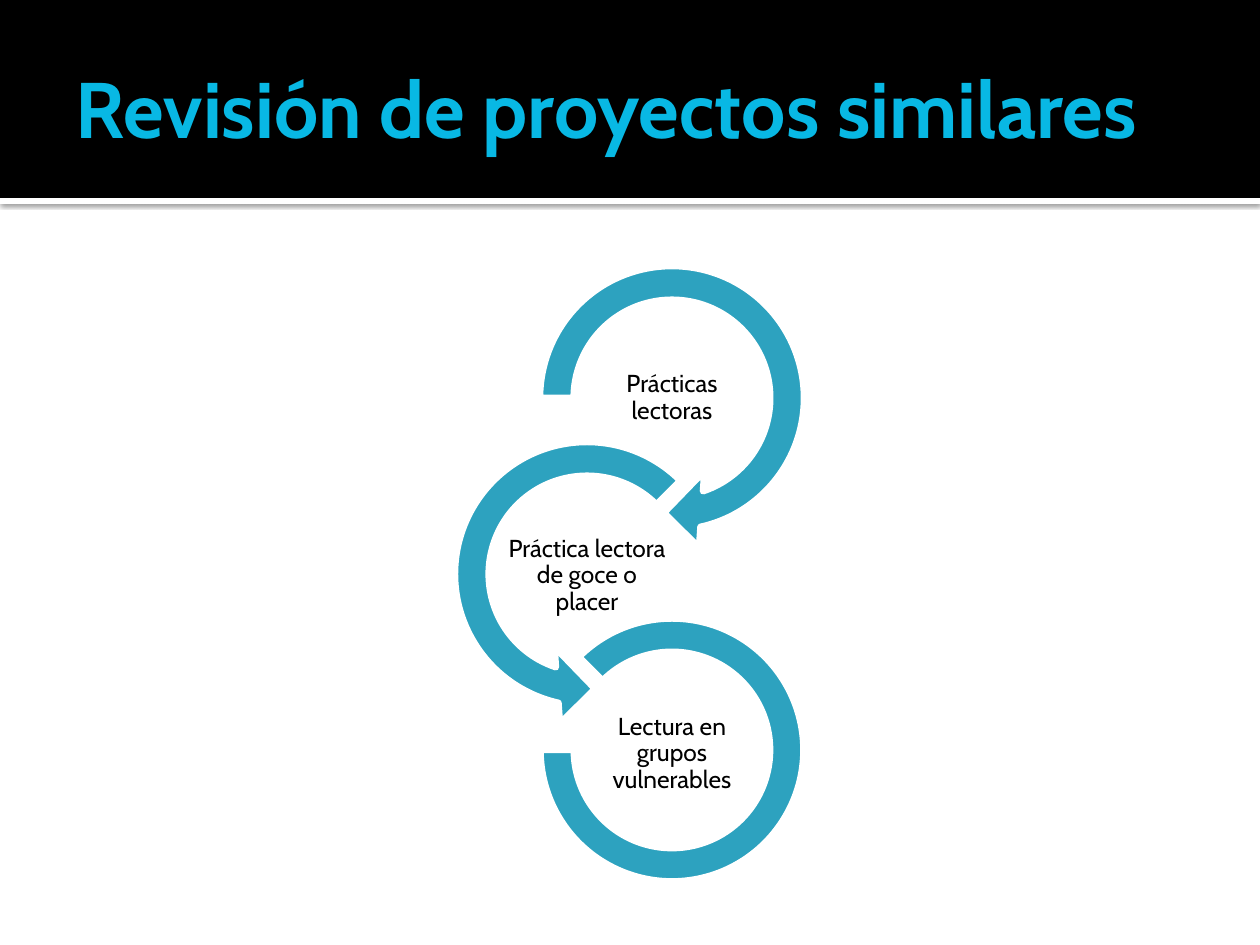
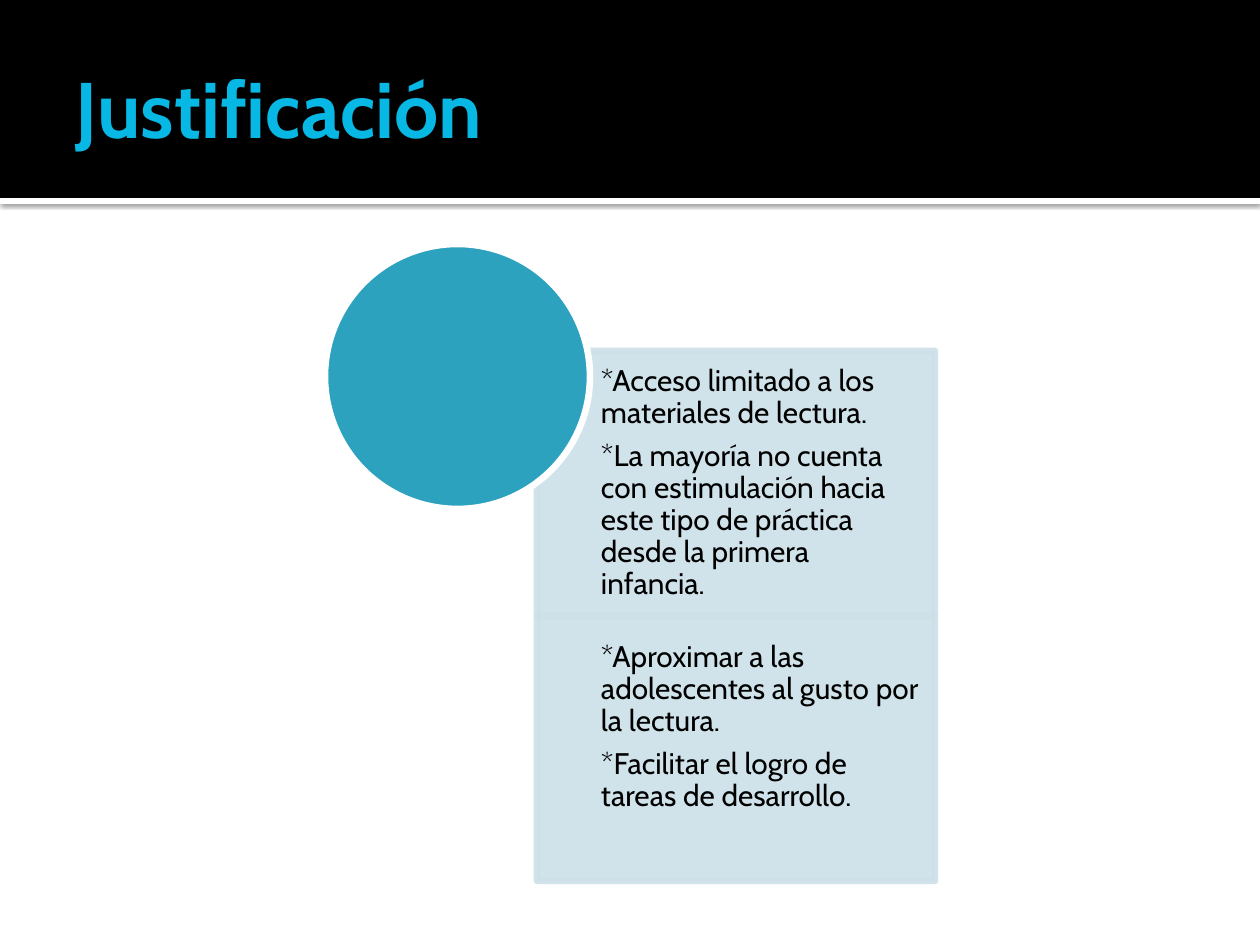
from lxml.etree import SubElement
from pptx import Presentation
from pptx.dml.color import RGBColor
from pptx.enum.shapes import MSO_SHAPE
from pptx.enum.text import MSO_ANCHOR, PP_ALIGN
from pptx.oxml.ns import qn
from pptx.util import Emu, Pt

FONT = "Cabin"
BLACK, WHITE, TITLE_BLUE = "000000", "FFFFFF", "08B8E4"
TEAL, PALE_BLUE = "2DA2BF", "CDE0E8"
OUTLINE = 3.78
SLIDE_WIDTH, SLIDE_HEIGHT = 1260, 945
BAND_HEIGHT, STRIP_HEIGHT = 198, 6

REVIEW_TITLE = "Revisión de proyectos similares"
RINGS = [
    ("Prácticas lectoras", MSO_SHAPE.CIRCULAR_ARROW, 672, 307,
     (0.11, 11.42, 45, 108, 0.125)),
    ("Práctica lectora de goce o placer", MSO_SHAPE.LEFT_CIRCULAR_ARROW, 587, 307,
     (0.11, 11.42, 63, 189, 0.125)),
    ("Lectura en grupos vulnerables", MSO_SHAPE.BLOCK_ARC, 672, 263,
     (135, 108, 0.127)),
]
FIRST_CENTER, RING_STEP, LABEL_STEP = 398, 176, 178
LABEL_WIDTH, LABEL_HEIGHT = 170, 86

REASONS_TITLE = "Justificación"
REASONS = [
    (["*Acceso limitado a los materiales de lectura.",
      "*La mayoría no cuenta con estimulación hacia este tipo de práctica "
      "desde la primera infancia."], 16),
    (["*Aproximar a las adolescentes al gusto por la lectura.",
      "*Facilitar el logro de tareas de desarrollo."], 59),
]
CARD_LEFT, CARD_TOP, CARD_WIDTH, CARD_HEIGHT = 537, 351, 398, 265
CARD_INDENT = 64
CIRCLE_BOX = (325, 244, 265, 265)


def px(length):
    return Emu(round(length * 914400 / 126))


def color(value):
    return RGBColor.from_string(value)


def set_alpha(fill_parent, percent):
    for color_element in fill_parent.iter(qn("a:srgbClr")):
        SubElement(color_element, qn("a:alpha"), val=str(percent * 1000))


def add_shape(slide, kind, box, fill, line=None, adjustments=()):
    shape = slide.shapes.add_shape(kind, *map(px, box))
    shape.shadow.inherit = False
    shape.fill.solid()
    shape.fill.fore_color.rgb = color(fill)
    if line:
        shape.line.color.rgb = color(line)
        shape.line.width = Pt(OUTLINE)
    else:
        shape.line.fill.background()
    for index, value in enumerate(adjustments):
        shape.adjustments[index] = value
    return shape


def add_text(slide, box, texts, size, insets, text_color=BLACK, bold=False,
             alignment=PP_ALIGN.LEFT, line_spacing=0.9, space_after=0):
    frame = slide.shapes.add_textbox(*map(px, box)).text_frame
    frame.word_wrap = True
    frame.vertical_anchor = MSO_ANCHOR.MIDDLE
    (frame.margin_left, frame.margin_top,
     frame.margin_right, frame.margin_bottom) = map(px, insets)
    frame.text = "\n".join(texts)
    for paragraph in frame.paragraphs:
        paragraph.alignment = alignment
        paragraph.line_spacing = line_spacing
        paragraph.space_after = Pt(space_after)
        paragraph.font.name = FONT
        paragraph.font.size = Pt(size)
        paragraph.font.bold = bold
        paragraph.font.color.rgb = color(text_color)


def add_strip_shadow(strip):
    effects = strip._element.spPr.find(qn("a:effectLst"))
    shadow = SubElement(effects, qn("a:outerShdw"), blurRad=str(Pt(2.5)),
                        dist=str(Pt(0.8)), dir="5400000", rotWithShape="0")
    SubElement(shadow, qn("a:srgbClr"), val=BLACK)
    set_alpha(shadow, 60)


def add_titled_slide(presentation, title):
    slide = presentation.slides.add_slide(presentation.slide_layouts[6])
    strip = add_shape(slide, MSO_SHAPE.RECTANGLE,
                      (0, BAND_HEIGHT, SLIDE_WIDTH, STRIP_HEIGHT), WHITE)
    add_strip_shadow(strip)
    add_shape(slide, MSO_SHAPE.RECTANGLE, (0, 0, SLIDE_WIDTH, BAND_HEIGHT), BLACK)
    add_text(slide, (63, 21, 1134, 173), [title], 45, (13, 6, 6, 6),
             TITLE_BLUE, bold=True, line_spacing=1.0)
    return slide


def build_review(presentation):
    slide = add_titled_slide(presentation, REVIEW_TITLE)
    for index, (label, kind, center, size, adjustments) in enumerate(RINGS):
        ring_top = FIRST_CENTER + index * RING_STEP - size / 2
        add_shape(slide, kind, (center - size / 2, ring_top, size, size),
                  TEAL, WHITE, adjustments)
        label_top = FIRST_CENTER + index * LABEL_STEP - LABEL_HEIGHT / 2
        add_text(slide, (center - LABEL_WIDTH / 2, label_top, LABEL_WIDTH, LABEL_HEIGHT),
                 [label], 14, (1, 1, 1, 1), alignment=PP_ALIGN.CENTER)


def build_reasons(presentation):
    slide = add_titled_slide(presentation, REASONS_TITLE)
    for index, (reasons, bottom_inset) in enumerate(REASONS):
        top = CARD_TOP + index * CARD_HEIGHT
        card = add_shape(slide, MSO_SHAPE.RECTANGLE,
                         (CARD_LEFT, top, CARD_WIDTH, CARD_HEIGHT),
                         PALE_BLUE, PALE_BLUE)
        set_alpha(card._element.spPr, 90)
        add_text(slide, (CARD_LEFT + CARD_INDENT, top,
                         CARD_WIDTH - CARD_INDENT, CARD_HEIGHT),
                 reasons, 17, (0, 16, 16, bottom_inset), space_after=6)
    add_shape(slide, MSO_SHAPE.OVAL, CIRCLE_BOX, TEAL, WHITE)


def main():
    presentation = Presentation()
    presentation.slide_width = px(SLIDE_WIDTH)
    presentation.slide_height = px(SLIDE_HEIGHT)
    build_review(presentation)
    build_reasons(presentation)
    presentation.save("out.pptx")


if __name__ == "__main__":
    main()
